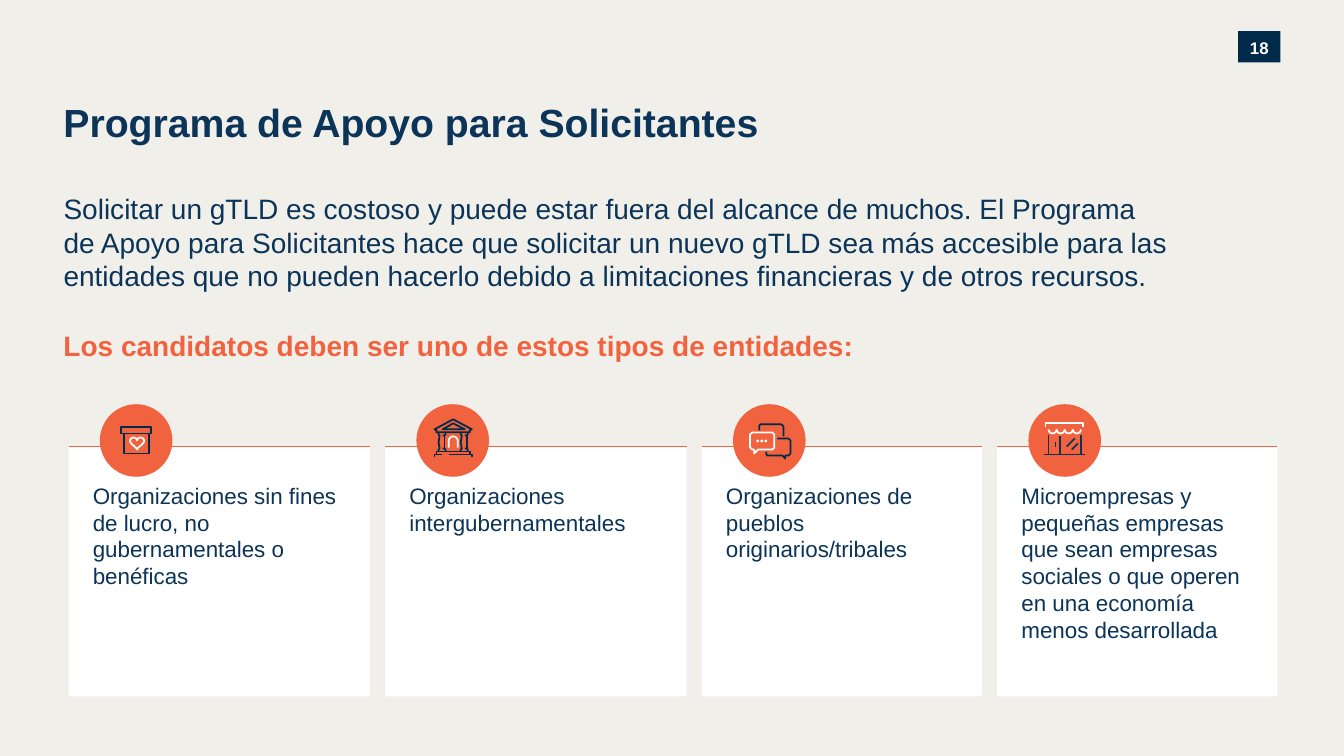
from math import cos, pi, sin

from lxml import etree
from pptx import Presentation
from pptx.dml.color import RGBColor
from pptx.enum import shapes, text
from pptx.oxml.ns import qn
from pptx.util import Inches, Pt

PAPER, WHITE, NAVY, INK, ORANGE = "F1EFEA", "FFFFFF", "0B3458", "002B49", "F1633E"
CARD_TOP, CARD_HEIGHT = 4.43, 2.48
BADGE_SIZE, BADGE_INDENT, BADGE_RISE = 0.72, 0.31, 0.42


def color(value):
    return RGBColor.from_string(value)


def write(sp, content, size, ink, bold=False, insets=(0, 0, 0, 0)):
    tf = sp.text_frame
    tf.word_wrap = True
    tf.margin_left, tf.margin_top, tf.margin_right, tf.margin_bottom = map(Inches, insets)
    tf.vertical_anchor = text.MSO_ANCHOR.TOP
    p = tf.paragraphs[0]
    p.text = content
    p.alignment = text.PP_ALIGN.LEFT
    font = p.runs[0].font
    font.name, font.size, font.bold = "Arial", Pt(size), bold
    font.color.rgb = color(ink)
    return tf


def add_text(slide, box, content, size, ink, bold=False):
    write(slide.shapes.add_textbox(*map(Inches, box)), content, size, ink, bold)


def add_filled(parent, kind, box, fill):
    sp = parent.add_shape(kind, *map(Inches, box))
    sp.shadow.inherit = False
    sp.fill.solid()
    sp.fill.fore_color.rgb = color(fill)
    sp.line.fill.background()
    return sp


def add_stroke(parent, points, ink, closed=False):
    """Draw points given in inches: two make a line, more make an outline."""
    points = [(Inches(x), Inches(y)) for x, y in points]
    if len(points) == 2:
        sp = parent.add_connector(shapes.MSO_CONNECTOR.STRAIGHT, *points[0], *points[1])
        etree.SubElement(sp._element.spPr, qn("a:effectLst"))
    else:
        builder = parent.build_freeform(*points[0])
        builder.add_line_segments(points[1:], close=closed)
        sp = builder.convert_to_shape()
        sp.shadow.inherit = False
        sp.fill.background()
    sp.line.color.rgb = color(ink)
    sp.line.width = Pt(1.25)


# Icon outlines: (points, colour, closed), in hundredths of an inch from the badge corner
def arc(cx, cy, r, start, end, steps=16):
    angles = [start + (end - start) * i / steps for i in range(steps + 1)]
    return [(cx + r * cos(a), cy + r * sin(a)) for a in angles]


def rectangle(left, top, right, bottom):
    return [(left, top), (right, top), (right, bottom), (left, bottom)]


def donation_box():
    heart = []
    for i in range(32):
        t = 2 * pi * i / 32
        y = 13 * cos(t) - 5 * cos(2 * t) - 2 * cos(3 * t) - cos(4 * t)
        heart.append((37 + 7 * sin(t) ** 3, 33 + (12 - y) * 12 / 29))
    return [(rectangle(21, 23, 51, 29), INK, True),
            (rectangle(24, 29, 49, 49), INK, True),
            (heart, WHITE, True)]


def government_building():
    base = [[(32, 50), (55, 50), (55, 52)],
            [(18, 52), (18, 50), (25, 50)],
            [(20, 50), (20, 47), (53, 47), (53, 50)]]
    column = [[(28, 31), (28, 44)],
              [(26, 31), (28, 31), (29, 30), (29, 28)],
              [(26, 44), (28, 44), (29, 45), (29, 47)],
              [(22, 47), (22, 45), (23, 44), (22, 38), (23, 31), (22, 30), (22, 28)]]
    columns = [[(x + dx, y) for x, y in part] for dx in (0, 22) for part in column]
    pediment = [(36.5, 19), (26, 25), (48, 25)]
    roof = [(53, 28), (20, 28), (20, 26), (18, 25), (36.5, 15), (55, 25), (53, 26)]
    door = [(32, 43), *arc(36.5, 36.5, 4.5, pi, 2 * pi), (41, 43)]
    return ([(part, INK, False) for part in base + columns]
            + [(pediment, INK, True), (roof, INK, True), (door, WHITE, False)])


def speech_bubbles():
    front = [(39, 28), (19, 28), (17, 30), (17, 43), (19, 45), (21, 45), (21, 49),
             (25, 45), (39, 45), (41, 43), (41, 30)]
    back = [(33, 47), (33, 49), (34, 51), (49, 51), (52, 54), (52, 51), (55, 51),
            (57, 49), (57, 36), (55, 34), (44, 34)]
    back_top = [(26, 26), (26, 22), (27, 20), (48, 20), (50, 22), (50, 32)]
    dots = [(arc(24.5 + 4 * i, 36.5, 0.5, 0, 2 * pi, 8), WHITE, True) for i in range(3)]
    return [(front, WHITE, True), (back, INK, False), (back_top, INK, False), *dots]


def shop_front():
    frame = [[(20, 31), (20, 50)], [(31, 32), (31, 50)], [(52, 31), (52, 50)],
             [(27, 38), (27, 42)], [(15, 50), (56, 50)],
             [(46, 34), (38, 42)], [(49, 39), (43, 45)]]
    awning = [[(17, 23), (17, 19), (54, 19), (54, 23)]]
    awning += [arc(24 + 8 * i, 25, 4, 0, pi) for i in range(4)]
    return ([(part, NAVY, False) for part in frame]
            + [(part, WHITE, False) for part in awning])


# Slide regions
def add_page_number(slide, box, number):
    sp = add_filled(slide.shapes, shapes.MSO_SHAPE.RECTANGLE, box, "002A49")
    tf = write(sp, number, 12, WHITE, bold=True)
    tf.vertical_anchor = text.MSO_ANCHOR.MIDDLE
    tf.paragraphs[0].alignment = text.PP_ALIGN.CENTER
    tf.paragraphs[0].line_spacing = 1.08


def add_badge(slide, left, top, icon):
    group = slide.shapes.add_group_shape().shapes
    add_filled(group, shapes.MSO_SHAPE.OVAL, (left, top, BADGE_SIZE, BADGE_SIZE), ORANGE)
    for points, ink, closed in icon():
        placed = [(left + x / 100, top + y / 100) for x, y in points]
        add_stroke(group, placed, ink, closed)


def add_card(slide, box, label, icon):
    left, top, width, _ = box
    sp = add_filled(slide.shapes, shapes.MSO_SHAPE.RECTANGLE, box, WHITE)
    write(sp, label, 16, NAVY, insets=(0.24, 0.35, 0.16, 0.2))
    add_stroke(slide.shapes, [(left, top), (left + width, top)], ORANGE)
    add_badge(slide, left + BADGE_INDENT, top - BADGE_RISE, icon)


def main():
    prs = Presentation()
    prs.slide_width, prs.slide_height = Inches(13.33), Inches(7.5)
    slide = prs.slides.add_slide(prs.slide_layouts[6])
    slide.background.fill.solid()
    slide.background.fill.fore_color.rgb = color(PAPER)

    # Heading and introduction
    add_page_number(slide, (12.28, 0.31, 0.42, 0.31), "18")
    add_text(slide, (0.63, 0.98, 7.34, 0.55), "Programa de Apoyo para Solicitantes",
             28, NAVY, bold=True)
    add_text(slide, (0.63, 1.9, 10.99, 1.49),
             "Solicitar un gTLD es costoso y puede estar fuera del alcance de muchos. "
             "El Programa de Apoyo para Solicitantes hace que solicitar un nuevo gTLD sea "
             "más accesible para las entidades que no pueden hacerlo debido a limitaciones "
             "financieras y de otros recursos.", 20, NAVY)
    add_text(slide, (0.63, 3.26, 10.37, 0.43),
             "Los candidatos deben ser uno de estos tipos de entidades:", 20, ORANGE, bold=True)

    # Entity cards
    cards = [
        (2.99, "Organizaciones sin fines de lucro, no gubernamentales o benéficas", donation_box),
        (2.99, "Organizaciones intergubernamentales", government_building),
        (2.78, "Organizaciones de pueblos originarios/tribales", speech_bubbles),
        (2.78, "Microempresas y pequeñas empresas que sean empresas sociales o que operen "
               "en una economía menos desarrollada", shop_front),
    ]
    left, gap = 0.68, 0.15
    for width, label, icon in cards:
        add_card(slide, (left, CARD_TOP, width, CARD_HEIGHT), label, icon)
        left += width + gap

    prs.save("out.pptx")


if __name__ == "__main__":
    main()
